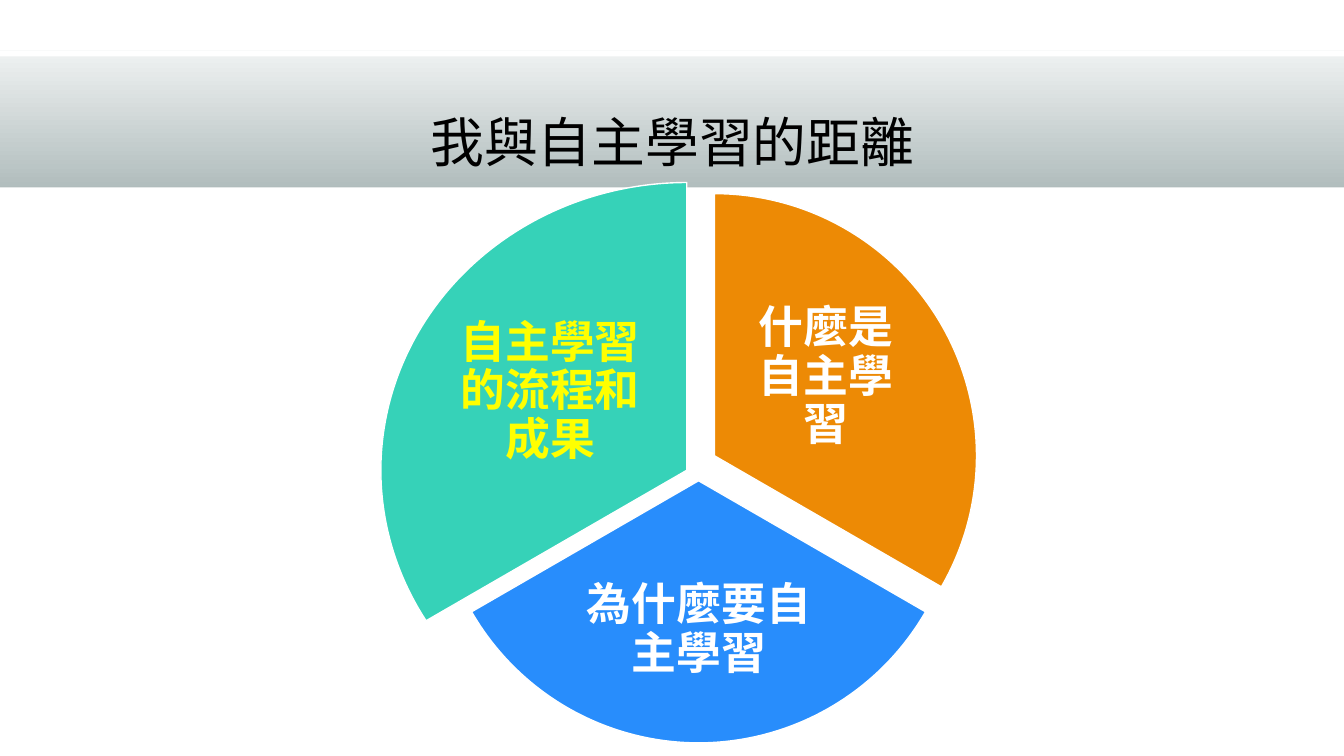
from dataclasses import dataclass

import pptx
import pptx.dml.color
import pptx.enum.shapes
import pptx.enum.text
import pptx.oxml.ns
import pptx.util
from lxml import etree

Cm = pptx.util.Cm
SHAPES = pptx.enum.shapes.MSO_SHAPE
ANCHORS = pptx.enum.text.MSO_ANCHOR

COLORS = {
    "white": "FFFFFF",
    "black": "000000",
    "yellow": "FFFF00",
    "orange": "ED8A05",
    "blue": "288DFC",
    "teal": "36D2B8",
    "band_top": "EFF2F2",
    "band_bottom": "B0BCBC",
}
EAST_ASIAN_FONT = "Noto Sans CJK SC"
SLIDE_WIDTH, SLIDE_HEIGHT = 33.87, 19.05
BAND_TOP, BAND_HEIGHT = 1.27, 3.53
EDGE_TOPS, EDGE_HEIGHT = (4.72, 1.27), 0.15
FIRST_ANGLE = 270
ADJUSTMENT_PER_DEGREE = 0.6


@dataclass(frozen=True)
class Box:
    """Position and size in centimetres."""
    left: float
    top: float
    width: float
    height: float

    def lengths(self) -> tuple:
        return Cm(self.left), Cm(self.top), Cm(self.width), Cm(self.height)


@dataclass(frozen=True)
class Sector:
    label: str
    fill: str
    text_color: str
    pie: Box
    text: Box


SECTORS = [
    Sector("什麼是自主學習", "orange", "white",
           Box(11.4, 4.88, 13.21, 13.21), Box(18.57, 7.32, 4.5, 4.39)),
    Sector("為什麼要自主學習", "blue", "white",
           Box(11, 5.51, 13.21, 13.21), Box(14.63, 13.84, 5.97, 4.09)),
    Sector("自主學習的流程和成果", "teal", "yellow",
           Box(9.6, 4.6, 15.42, 14.5), Box(11.25, 7.47, 5.23, 4.83)),
]


def rgb(name: str) -> pptx.dml.color.RGBColor:
    return pptx.dml.color.RGBColor.from_string(COLORS[name])


def add_preset(slide, kind, box: Box, fill: str):
    """Add a flat shape with a solid fill and no outline."""
    shape = slide.shapes.add_shape(kind, *box.lengths())
    shape.shadow.inherit = False
    shape.fill.solid()
    shape.fill.fore_color.rgb = rgb(fill)
    shape.line.fill.background()
    return shape


def write_text(shape, text: str, *, size: float, color: str, font: str, anchor,
               bold: bool = False, small_caps: bool = False) -> None:
    frame = shape.text_frame
    frame.word_wrap = True
    frame.auto_size = pptx.enum.text.MSO_AUTO_SIZE.NONE
    frame.vertical_anchor = anchor
    paragraph = frame.paragraphs[0]
    paragraph.alignment = pptx.enum.text.PP_ALIGN.CENTER
    paragraph.line_spacing = 0.9
    run = paragraph.add_run()
    run.text = text
    run.font.size = pptx.util.Pt(size)
    run.font.bold = bold
    run.font.color.rgb = rgb(color)
    run.font.name = font
    properties = run._r.get_or_add_rPr()
    properties.set("lang", "zh-TW")
    if small_caps:
        properties.set("cap", "small")
    east_asian = etree.SubElement(properties, pptx.oxml.ns.qn("a:ea"))
    east_asian.set("typeface", EAST_ASIAN_FONT)


def add_header_band(slide) -> None:
    band = add_preset(slide, SHAPES.RECTANGLE,
                      Box(0, BAND_TOP, SLIDE_WIDTH, BAND_HEIGHT), "band_top")
    band.fill.gradient()
    band.fill.gradient_angle = 270
    for stop, color in zip(band.fill.gradient_stops, ("band_top", "band_bottom")):
        stop.color.rgb = rgb(color)
    for top in EDGE_TOPS:
        add_preset(slide, SHAPES.RECTANGLE,
                   Box(0, top, SLIDE_WIDTH, EDGE_HEIGHT), "white")


def place_title(slide, text: str) -> None:
    """Put the title placeholder in front of the header band."""
    title = slide.shapes.title
    slide.shapes._spTree.append(title._element)
    title.left, title.top, title.width, title.height = Box(2.97, 1.55, 27.94, 3.05).lengths()
    write_text(title, text, size=48, color="black", font=EAST_ASIAN_FONT,
               anchor=ANCHORS.BOTTOM, small_caps=True)


def add_sector(slide, sector: Sector, start: float, sweep: float) -> None:
    """Draw a pie sector clockwise from the start angle, with its label."""
    pie = add_preset(slide, SHAPES.PIE, sector.pie, sector.fill)
    for index, angle in enumerate((start, start + sweep)):
        pie.adjustments[index] = angle % 360 * ADJUSTMENT_PER_DEGREE
    pie.line.color.rgb = rgb("white")
    pie.line.width = pptx.util.Pt(1)
    label = slide.shapes.add_textbox(*sector.text.lengths())
    frame = label.text_frame
    frame.margin_left = frame.margin_right = Cm(0.1)
    frame.margin_top = frame.margin_bottom = Cm(0.1)
    write_text(label, sector.label, size=32, color=sector.text_color,
               font="Calibri", anchor=ANCHORS.MIDDLE, bold=True)


def main() -> None:
    presentation = pptx.Presentation()
    presentation.slide_width = Cm(SLIDE_WIDTH)
    presentation.slide_height = Cm(SLIDE_HEIGHT)
    slide = presentation.slides.add_slide(presentation.slide_layouts[5])
    add_header_band(slide)
    place_title(slide, "我與自主學習的距離")
    sweep = 360 / len(SECTORS)
    for index, sector in enumerate(SECTORS):
        add_sector(slide, sector, FIRST_ANGLE + index * sweep, sweep)
    presentation.save("out.pptx")


if __name__ == "__main__":
    main()
